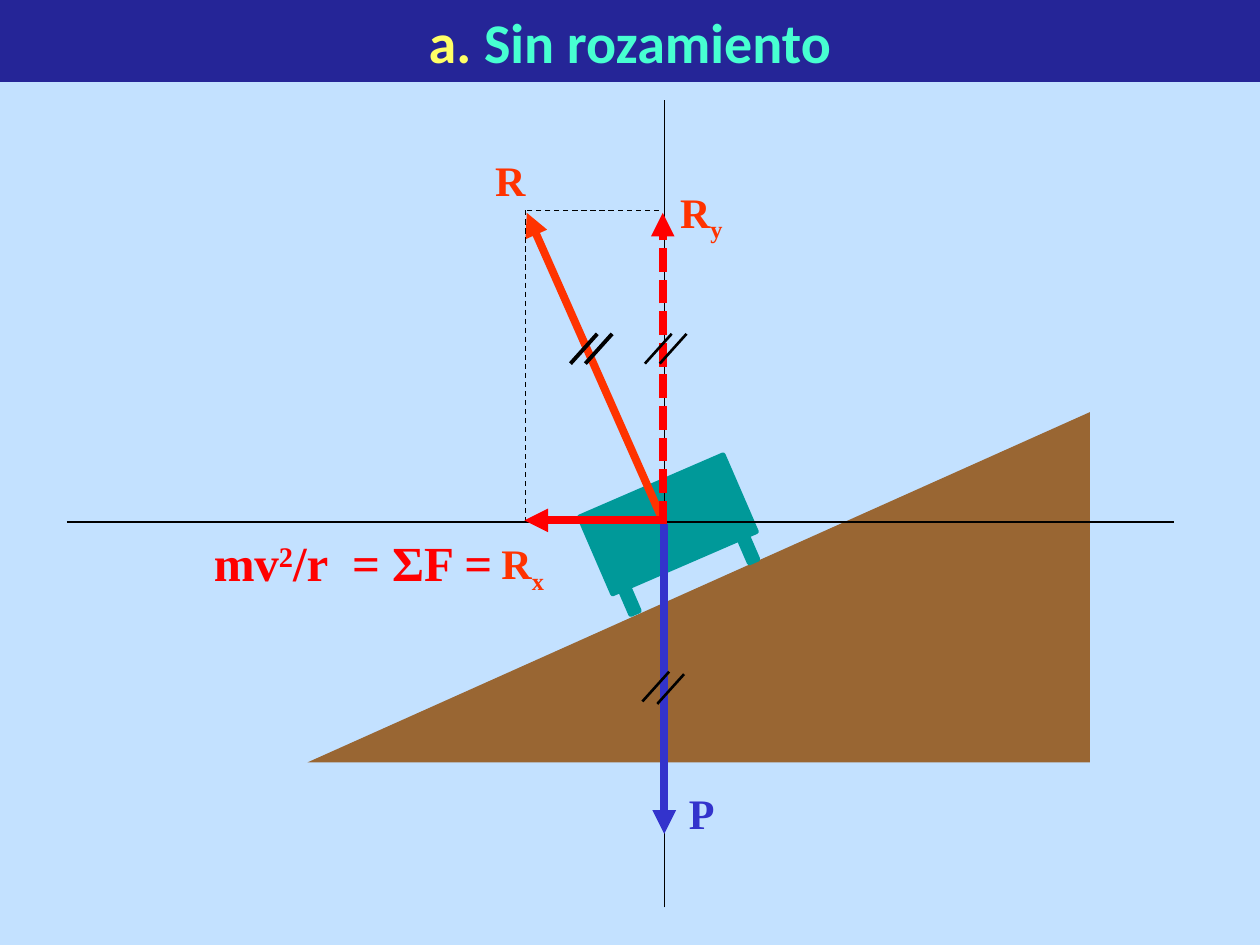
import pptx
import pptx.dml.color
import pptx.enum.dml
import pptx.enum.shapes
import pptx.enum.text
import pptx.oxml
import pptx.oxml.ns
import pptx.util

Cm = pptx.util.Cm
Pt = pptx.util.Pt
RGBColor = pptx.dml.color.RGBColor
Shape = pptx.enum.shapes.MSO_SHAPE
Dash = pptx.enum.dml.MSO_LINE

SKY = RGBColor(0xC3, 0xE1, 0xFF)
NAVY = RGBColor(0x25, 0x25, 0x97)
YELLOW = RGBColor(0xFF, 0xFF, 0x66)
AQUA = RGBColor(0x47, 0xFF, 0xD1)
BROWN = RGBColor(0x99, 0x66, 0x33)
TEAL = RGBColor(0x00, 0x99, 0x99)
BLUE = RGBColor(0x33, 0x33, 0xCC)
ORANGE = RGBColor(0xFF, 0x33, 0x00)
RED = RGBColor(0xFF, 0x00, 0x00)
BLACK = RGBColor(0x00, 0x00, 0x00)

SLOPE_ROTATION = -23.4
CENTER_X, CENTER_Y = 13.39, 10.52
RESULTANT_X, RESULTANT_Y = 10.59, 4.24


def add_title(slide, parts):
    title = slide.shapes.title
    title.left, title.top = Cm(0), Cm(0)
    title.width, title.height = Cm(25.4), Cm(1.65)
    title.fill.solid()
    title.fill.fore_color.rgb = NAVY
    frame = title.text_frame
    frame.auto_size = pptx.enum.text.MSO_AUTO_SIZE.NONE
    frame.vertical_anchor = pptx.enum.text.MSO_ANCHOR.MIDDLE
    paragraph = frame.paragraphs[0]
    paragraph.alignment = pptx.enum.text.PP_ALIGN.CENTER
    paragraph.font.name = "Calibri"
    paragraph.font.size = Pt(32)
    paragraph.font.bold = True
    for text, color in parts:
        run = paragraph.add_run()
        run.text = text
        run.font.color.rgb = color


def add_solid(slide, kind, left, top, width, height, color):
    shape = slide.shapes.add_shape(kind, Cm(left), Cm(top), Cm(width), Cm(height))
    shape.shadow.inherit = False
    shape.fill.solid()
    shape.fill.fore_color.rgb = color
    shape.line.fill.background()
    return shape


def add_ramp(slide):
    ramp = add_solid(slide, Shape.RIGHT_TRIANGLE, 6.2, 8.31, 15.77, 7.06, BROWN)
    ramp.element.spPr.find(pptx.oxml.ns.qn("a:xfrm")).set("flipH", "1")


def add_car_part(slide, left, top, width, height):
    part = add_solid(slide, Shape.RECTANGLE, left, top, width, height, TEAL)
    part.rotation = SLOPE_ROTATION
    part.line.color.rgb = TEAL
    part.line.width = Pt(3)


def add_line(slide, start, end, color=BLACK, width=0.75, dash=None, arrow=False):
    line = slide.shapes.add_connector(
        pptx.enum.shapes.MSO_CONNECTOR.STRAIGHT,
        Cm(start[0]), Cm(start[1]), Cm(end[0]), Cm(end[1]))
    line.line.color.rgb = color
    line.line.width = Pt(width)
    if dash is not None:
        line.line.dash_style = dash
    properties = line.element.spPr
    if arrow:
        outline = properties.find(pptx.oxml.ns.qn("a:ln"))
        outline.append(pptx.oxml.parse_xml(
            f'<a:tailEnd {pptx.oxml.ns.nsdecls("a")} type="triangle"/>'))
    properties.append(pptx.oxml.parse_xml(
        f'<a:effectLst {pptx.oxml.ns.nsdecls("a")}/>'))


def add_force(slide, start, end, color, dash=None):
    add_line(slide, start, end, color, 4.5, dash, arrow=True)


def add_equality_mark(slide, left, top, width, step_down=0):
    """Draw the two slanted strokes that mark vectors of equal length."""
    for index in range(2):
        x, y = left + index * 0.3, top + index * step_down
        add_line(slide, (x + 0.54, y), (x, y + 0.6), width=width)


def add_label(slide, left, top, parts, color, size=24, width=2.11, height=1.27):
    """Add a label from (text, baseline) parts; baseline is in 1/1000 percent."""
    box = slide.shapes.add_textbox(Cm(left), Cm(top), Cm(width), Cm(height))
    box.text_frame.word_wrap = True
    paragraph = box.text_frame.paragraphs[0]
    paragraph.font.name = "Times New Roman"
    paragraph.font.size = Pt(size)
    paragraph.font.bold = True
    paragraph.font.color.rgb = color
    for text, baseline in parts:
        run = paragraph.add_run()
        run.text = text
        if baseline:
            run.font._element.set("baseline", str(baseline))


def main():
    presentation = pptx.Presentation()
    presentation.slide_width, presentation.slide_height = Cm(25.4), Cm(19.05)
    slide = presentation.slides.add_slide(presentation.slide_layouts[5])
    slide.background.fill.solid()
    slide.background.fill.fore_color.rgb = SKY

    add_title(slide, [("a. ", YELLOW), ("Sin rozamiento", AQUA)])

    add_ramp(slide)
    add_car_part(slide, 11.89, 9.73, 3.15, 1.68)
    for left, top in [(12.6, 11.81), (14.99, 10.77)]:
        add_car_part(slide, left, top, 0.18, 0.56)

    add_line(slide, (CENTER_X, 18.29), (CENTER_X, 2.01))
    add_line(slide, (1.35, CENTER_Y), (23.67, CENTER_Y))

    corner = (RESULTANT_X, RESULTANT_Y)
    add_force(slide, (CENTER_X, 10.57), (CENTER_X, 16.81), BLUE)
    add_force(slide, (13.36, 10.49), (10.62, 4.29), ORANGE)
    add_line(slide, (13.28, RESULTANT_Y), corner, dash=Dash.DASH)
    add_line(slide, corner, (RESULTANT_X, CENTER_Y), dash=Dash.DASH)
    add_force(slide, (13.36, 10.57), (13.36, 4.29), RED, Dash.SQUARE_DOT)
    add_force(slide, (13.28, 10.49), (10.57, 10.49), RED)

    add_equality_mark(slide, 11.5, 6.73, 2.25)
    add_equality_mark(slide, 13.0, 6.73, 1.5)
    add_equality_mark(slide, 12.95, 13.54, 1.5, step_down=0.05)

    add_label(slide, 13.64, 15.75, [("P", 0)], BLUE)
    add_label(slide, 9.73, 3.0, [("R", 0)], ORANGE)
    add_label(slide, 13.46, 3.63, [("R", 0), ("y", -25000)], ORANGE)
    add_label(slide, 9.86, 10.72, [("R", 0), ("x", -25000)], ORANGE)
    add_label(slide, 4.06, 10.62, [("mv", 0), ("2", 30000), ("/r  = ΣF =", 0)],
              RED, size=28, width=6.78, height=1.45)

    presentation.save("out.pptx")


if __name__ == "__main__":
    main()
